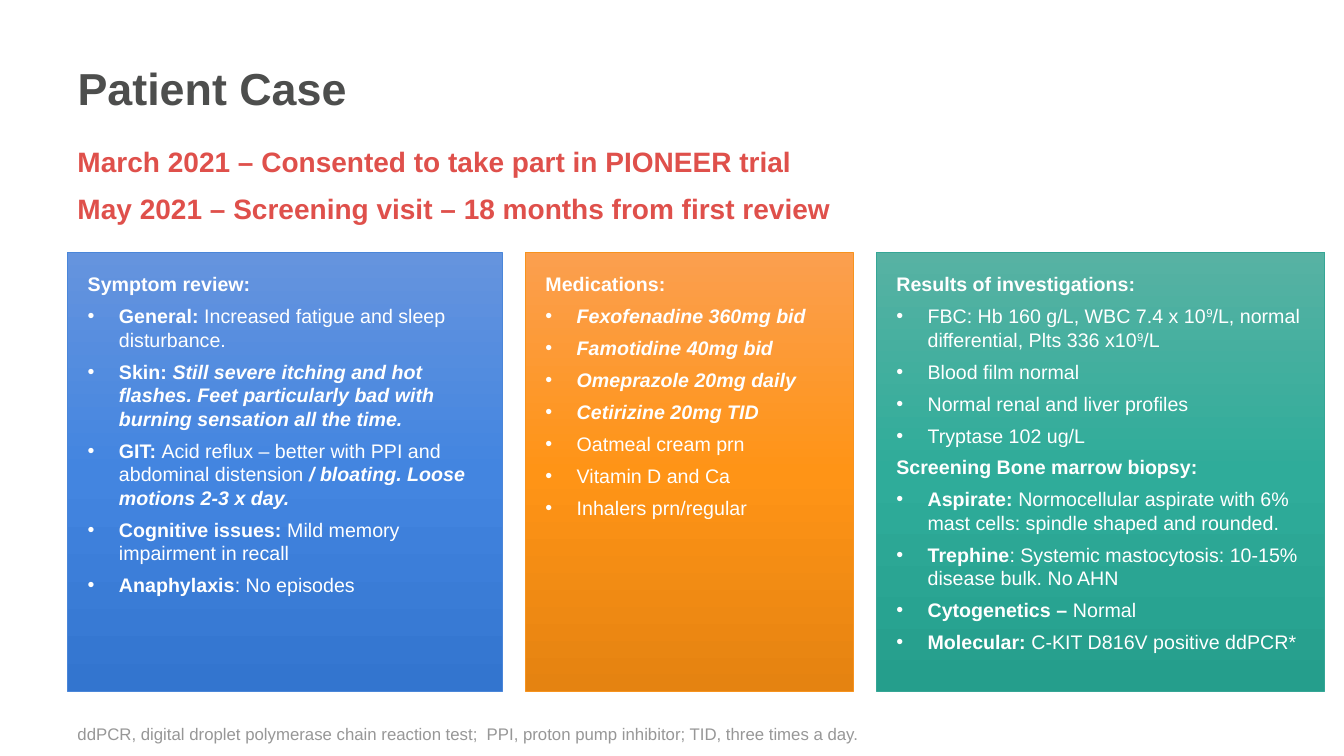
"""Build the Patient Case slide with three gradient panels of findings."""
from copy import deepcopy

from lxml import etree
from pptx import Presentation
from pptx.dml.color import RGBColor
from pptx.enum.shapes import MSO_SHAPE
from pptx.enum.text import MSO_ANCHOR, PP_ALIGN
from pptx.oxml.ns import qn
from pptx.util import Pt

PX = 9144
RECT = MSO_SHAPE.RECTANGLE
TOP, MIDDLE, BOTTOM = MSO_ANCHOR.TOP, MSO_ANCHOR.MIDDLE, MSO_ANCHOR.BOTTOM
LEFT = PP_ALIGN.LEFT
FONT = "Arial"
TITLE_ONLY = 5

COLORS = {"title": "4D4E4D", "dates": "DF504B", "note": "979797", "text": "FFFFFF"}

TITLE = "Patient Case"
DATES = [
    "March 2021 – Consented to take part in PIONEER trial",
    "May 2021 – Screening visit – 18 months from first review",
]
NOTE = ("ddPCR, digital droplet polymerase chain reaction test;  "
        "PPI, proton pump inhibitor; TID, three times a day.")

# Each paragraph is (bulleted, runs); each run is (text, style letters).
SYMPTOMS = [
    (False, [("Symptom review:", "b")]),
    (True, [("General: ", "b"), ("Increased fatigue and sleep disturbance.", "")]),
    (True, [("Skin: ", "b"),
            ("Still severe itching and hot flashes. Feet particularly bad with "
             "burning sensation all the time.", "bi")]),
    (True, [("GIT: ", "b"),
            ("Acid reflux – better with PPI and abdominal distension ", ""),
            ("/ bloating. Loose motions 2-3 x day.", "bi")]),
    (True, [("Cognitive issues: ", "b"), ("Mild memory impairment in recall", "")]),
    (True, [("Anaphylaxis", "b"), (": No episodes", "")]),
]
MEDICATIONS = [
    (False, [("Medications:", "b")]),
    (True, [("Fexofenadine 360mg bid", "bi")]),
    (True, [("Famotidine 40mg bid", "bi")]),
    (True, [("Omeprazole 20mg daily", "bi")]),
    (True, [("Cetirizine 20mg TID", "bi")]),
    (True, [("Oatmeal cream prn", "")]),
    (True, [("Vitamin D and Ca", "")]),
    (True, [("Inhalers prn/regular", "")]),
]
RESULTS = [
    (False, [("Results of investigations:", "b")]),
    (True, [("FBC: Hb 160 g/L, WBC 7.4 x 10", ""), ("9", "^"),
            ("/L, normal differential, Plts 336 x10", ""), ("9", "^"), ("/L", "")]),
    (True, [("Blood film normal", "")]),
    (True, [("Normal renal and liver profiles", "")]),
    (True, [("Tryptase 102 ug/L", "")]),
    (False, [("Screening Bone marrow biopsy:", "b")]),
    (True, [("Aspirate: ", "b"),
            ("Normocellular aspirate with 6% mast cells: spindle shaped and rounded.", "")]),
    (True, [("Trephine", "b"),
            (": Systemic mastocytosis: 10-15% disease bulk. No AHN", "")]),
    (True, [("Cytogenetics – ", "b"), ("Normal", "")]),
    (True, [("Molecular: ", "b"), ("C-KIT D816V positive ddPCR*", "")]),
]

MARGIN, TEXT_W = 67, 1175
PANEL_TOP, PANEL_H, PANEL_GAP = 250, 436, 23
INSET, INSET_BOTTOM, INDENT = 20, 5, 31
PANELS = [
    {"width": 431, "right": INSET, "stops": ("6594DE", "4385E0", "3375CF"),
     "line": "4A86D9", "body": SYMPTOMS},
    {"width": 325, "right": 0, "stops": ("FB9F4F", "FF9416", "E58311"),
     "line": "F7931E", "body": MEDICATIONS},
    {"width": 445, "right": INSET, "stops": ("57B2A3", "2FAC9A", "259E8C"),
     "line": "35A696", "body": RESULTS},
]


def px(*values):
    return [v * PX for v in values]


def add_run(p, text, size, color, style=""):
    r = p.add_run()
    r.text = text
    r.font.name = FONT
    r.font.size = Pt(size)
    r.font.bold = "b" in style
    r.font.italic = "i" in style
    r.font.color.rgb = RGBColor.from_string(color)
    if "^" in style:
        r.font._element.set("baseline", "30000")


def add_lines(tf, lines, size, color, style="", gap=0):
    tf.word_wrap = True
    for i, line in enumerate(lines):
        p = tf.add_paragraph() if i else tf.paragraphs[0]
        p.alignment = LEFT
        if i:
            p.space_before = Pt(gap)
        add_run(p, line, size, color, style)


def add_bullet(p):
    pPr = p._p.get_or_add_pPr()
    pPr.set("marL", str(INDENT * PX))
    pPr.set("indent", str(-INDENT * PX))
    etree.SubElement(pPr, qn("a:buFont")).set("typeface", FONT)
    etree.SubElement(pPr, qn("a:buChar")).set("char", "•")


def fill_gradient(sp, colors):
    sp.fill.gradient()
    sp.fill.gradient_angle = 270
    stop_list = sp._element.spPr.find(qn("a:gradFill")).find(qn("a:gsLst"))
    stop_list.insert(1, deepcopy(stop_list[0]))
    for i, (stop, color) in enumerate(zip(sp.fill.gradient_stops, colors)):
        stop.position = i / (len(colors) - 1)
        stop.color.rgb = RGBColor.from_string(color)


def add_panel(slide, left, panel):
    sp = slide.shapes.add_shape(RECT, *px(left, PANEL_TOP, panel["width"], PANEL_H))
    sp.shadow.inherit = False
    fill_gradient(sp, panel["stops"])
    sp.line.color.rgb = RGBColor.from_string(panel["line"])
    sp.line.width = Pt(0.5)
    tf = sp.text_frame
    tf.word_wrap = True
    tf.vertical_anchor = TOP
    tf.margin_left, tf.margin_top, tf.margin_right, tf.margin_bottom = px(
        INSET, INSET, panel["right"], INSET_BOTTOM)
    for i, (bulleted, runs) in enumerate(panel["body"]):
        p = tf.add_paragraph() if i else tf.paragraphs[0]
        p.alignment = LEFT
        p.space_after = Pt(6)
        if bulleted:
            add_bullet(p)
        for text, style in runs:
            add_run(p, text, 14, COLORS["text"], style)


def main():
    prs = Presentation()
    prs.slide_width, prs.slide_height = px(1333, 750)
    slide = prs.slides.add_slide(prs.slide_layouts[TITLE_ONLY])

    title = slide.shapes.title
    title.left, title.top, title.width, title.height = px(MARGIN, 22, TEXT_W, 130)
    title.text_frame.vertical_anchor = MIDDLE
    add_lines(title.text_frame, [TITLE], 32, COLORS["title"], "b")

    dates = slide.shapes.add_textbox(*px(MARGIN, 138, TEXT_W, 61))
    add_lines(dates.text_frame, DATES, 20, COLORS["dates"], "b", gap=10)

    left = MARGIN
    for panel in PANELS:
        add_panel(slide, left, panel)
        left += panel["width"] + PANEL_GAP

    note = slide.shapes.add_textbox(*px(MARGIN, 695, TEXT_W, 48))
    note.text_frame.vertical_anchor = BOTTOM
    add_lines(note.text_frame, [NOTE], 12, COLORS["note"])

    prs.save("out.pptx")


if __name__ == "__main__":
    main()
